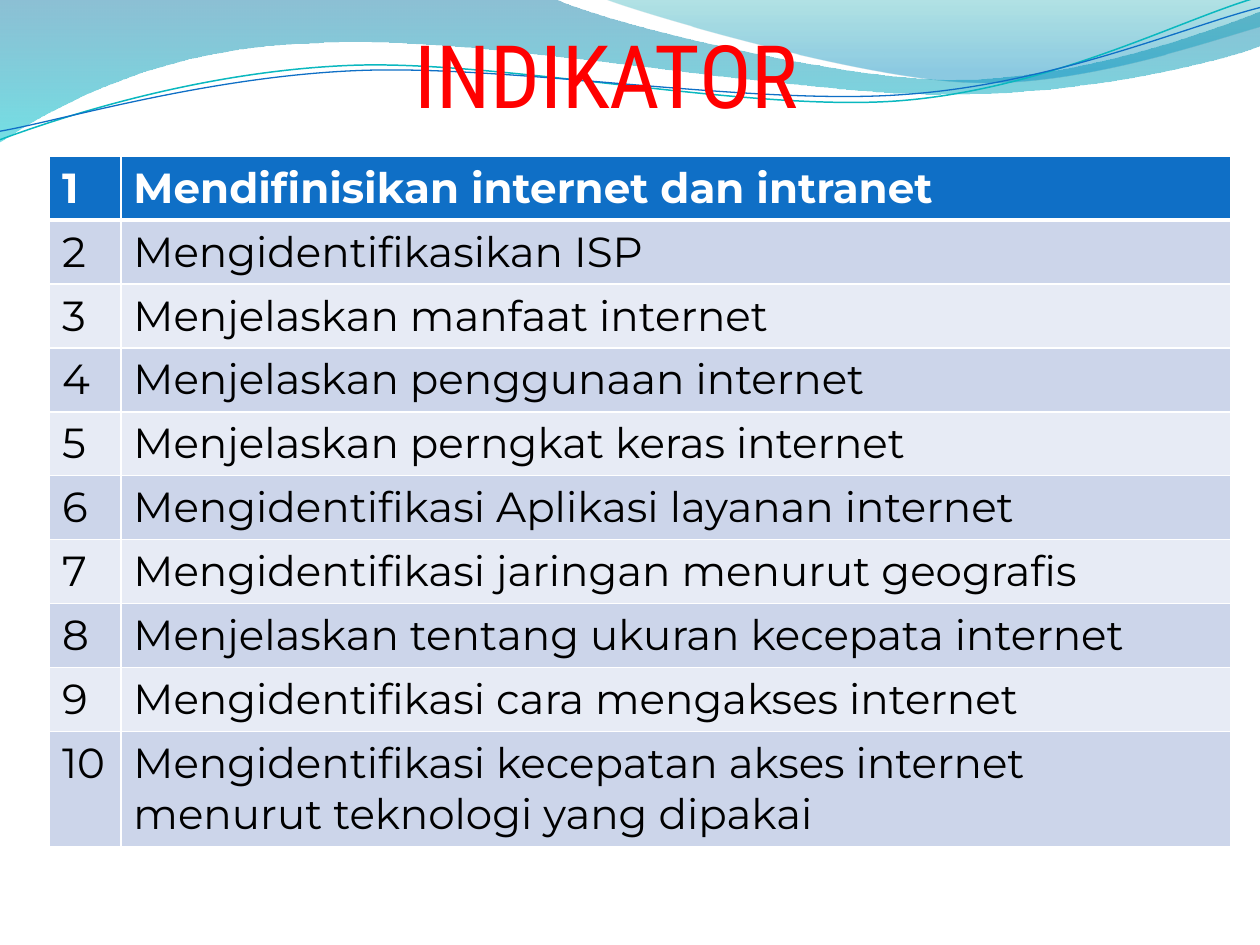
from lxml.etree import SubElement
from pptx import Presentation
from pptx.dml.color import RGBColor
from pptx.enum.text import MSO_ANCHOR, PP_ALIGN
from pptx.oxml.ns import qn
from pptx.util import Pt

WHITE = RGBColor(0xFF, 0xFF, 0xFF)
BLACK = RGBColor(0x00, 0x00, 0x00)
RED = RGBColor(0xFF, 0x00, 0x00)
BLUE = RGBColor(0x0F, 0x6F, 0xC6)
TURQUOISE = RGBColor(0x0A, 0xB8, 0xBF)
BAND_DARK = RGBColor(0xCC, 0xD5, 0xEA)
BAND_LIGHT = RGBColor(0xE7, 0xEB, 0xF5)

# Gradient stops: position, colour, opacity in percent
WIDE_GRADIENT = [(0, RGBColor(0x00, 0x74, 0xA1), 45), (1, RGBColor(0x00, 0xC6, 0xCF), 55)]
RIGHT_GRADIENT = [(0, RGBColor(0x00, 0xA1, 0xA9), 30), (0.8, RGBColor(0x00, 0x8B, 0xBF), 45)]

# Outlines: a start point, then lines (1 point) and Bezier curves (3 points)
WIDE_WAVE = [
    [(0, 0)], [(316.8, -0.7)],
    [(342.7, 12.2), (478.1, 45.4), (545.8, 45.4)],
    [(614.2, 45.4), (689.8, 18.7), (720, 6.5)],
    [(720.7, 25.9)],
    [(707.8, 31.7), (626.4, 54.7), (537.1, 54)],
    [(447.8, 54), (275, 20.2), (185, 24.5)],
    [(92.9, 25.9), (33.1, 59.8), (-0.7, 81.4)],
]
RIGHT_WAVE = [
    [(344.9, -0.7)],
    [(366.5, 7.9), (491, 44.6), (553.7, 46.8)],
    [(616.3, 49.7), (691.9, 23), (720, 15.1)],
    [(720, 0)],
]
TURQUOISE_CURVE = [
    [(-1.4, 62.9)],
    [(33.8, 51.7), (114.1, 29.4), (199.8, 29.9)],
    [(284.9, 30.3), (425.8, 67.3), (512.4, 64.9)],
    [(599, 62.4), (676.5, 25.7), (720.2, 15.5)],
]
BLUE_CURVE = [
    [(-1.1, 58)],
    [(32.9, 53.8), (118.3, 32.5), (204.1, 33)],
    [(290.6, 33.4), (428.9, 63.8), (515.5, 61.4)],
    [(601.3, 59.6), (678.5, 30.1), (721.4, 21.3)],
]
CURVE_ROTATION = 357.3

INDICATORS = [
    "Mendifinisikan internet dan intranet",
    "Mengidentifikasikan ISP",
    "Menjelaskan manfaat internet",
    "Menjelaskan penggunaan internet",
    "Menjelaskan perngkat keras internet",
    "Mengidentifikasi Aplikasi layanan internet",
    "Mengidentifikasi jaringan menurut geografis",
    "Menjelaskan tentang ukuran kecepata internet",
    "Mengidentifikasi cara mengakses internet",
    "Mengidentifikasi kecepatan akses internet menurut teknologi yang dipakai",
]


def set_attributes(target, values):
    for name, value in values.items():
        setattr(target, name, value)


def add_outline(shapes, left, top, outline, close):
    """Build a freeform, joining each three-point segment into a Bezier curve."""
    points = [(Pt(left + x), Pt(top + y)) for segment in outline for x, y in segment]
    builder = shapes.build_freeform(*points[0])
    builder.add_line_segments(points[1:], close=close)
    shape = builder.convert_to_shape()
    shape.shadow.inherit = False
    lines = shape._element.iter(qn("a:lnTo"))
    lines = iter(list(lines))
    for segment in outline[1:]:
        first, *others = [next(lines) for _ in segment]
        if others:
            first.tag = qn("a:cubicBezTo")
        for line in others:
            first.append(line[0])
            line.getparent().remove(line)
    return shape


def add_waves(slide, left, top):
    for outline, gradient in ((WIDE_WAVE, WIDE_GRADIENT), (RIGHT_WAVE, RIGHT_GRADIENT)):
        wave = add_outline(slide.shapes, left, top, outline, close=True)
        wave.line.fill.background()
        wave.fill.gradient()
        wave.fill.gradient_angle = 270
        for stop, (position, color, _) in zip(wave.fill.gradient_stops, gradient):
            stop.position = position
            stop.color.rgb = color
        for color_element, (_, _, opacity) in zip(wave._element.iter(qn("a:srgbClr")), gradient):
            SubElement(color_element, qn("a:alpha"), val=str(opacity * 1000))
    group = slide.shapes.add_group_shape()
    for outline, color, width in ((TURQUOISE_CURVE, TURQUOISE, 0.85), (BLUE_CURVE, BLUE, 0.75)):
        curve = add_outline(group.shapes, left, top, outline, close=False)
        curve.rotation = CURVE_ROTATION
        curve.fill.background()
        curve.line.color.rgb = color
        curve.line.width = Pt(width)


def place_title(slide, left, top, width, height):
    title = slide.shapes.title
    set_attributes(title, {"left": Pt(left), "top": Pt(top), "width": Pt(width), "height": Pt(height)})
    set_attributes(title.text_frame, {
        "text": "INDIKATOR", "vertical_anchor": MSO_ANCHOR.BOTTOM, "word_wrap": True,
        "margin_left": 0, "margin_right": 0, "margin_top": Pt(3.6), "margin_bottom": 0,
    })
    paragraph = title.text_frame.paragraphs[0]
    paragraph.alignment = PP_ALIGN.CENTER
    set_attributes(paragraph.runs[0].font, {"name": "Roboto Condensed", "size": Pt(50)})
    paragraph.runs[0].font.color.rgb = RED
    slide.shapes._spTree.append(title._element)  # in front of the waves


def add_borders(cell, widths):
    properties = cell._tc.get_or_add_tcPr()
    for side, width in widths.items():
        line = SubElement(properties, qn(f"a:ln{side}"), w=str(Pt(width)))
        fill = SubElement(line, qn("a:solidFill"))
        SubElement(fill, qn("a:srgbClr"), val=str(WHITE))


def add_indicator_table(slide, left, top, width, height):
    frame = slide.shapes.add_table(len(INDICATORS), 2, Pt(left), Pt(top), Pt(width), Pt(height))
    table = frame.table
    number_width = 40.8
    table.columns[0].width = Pt(number_width)
    table.columns[1].width = Pt(width - number_width)
    for index, indicator in enumerate(INDICATORS):
        table.rows[index].height = Pt(29.2)
        header = index == 0
        band = BLUE if header else (BAND_DARK if index % 2 else BAND_LIGHT)
        for cell, text in zip(table.rows[index].cells, (str(index + 1), indicator)):
            add_borders(cell, {"L": 1, "R": 1, "T": 3 if index == 1 else 1, "B": 3 if header else 1})
            cell.fill.solid()
            cell.fill.fore_color.rgb = band
            cell.text = text
            font = cell.text_frame.paragraphs[0].runs[0].font
            set_attributes(font, {"name": "Montserrat", "size": Pt(24), "bold": header})
            font.color.rgb = WHITE if header else BLACK
    frame.height = Pt(height)


def main():
    presentation = Presentation()
    set_attributes(presentation, {"slide_width": Pt(720), "slide_height": Pt(540)})
    slide = presentation.slides.add_slide(presentation.slide_layouts[5])
    add_waves(slide, 0, 0)
    place_title(slide, 22.5, 5.5, 648, 66.7)
    add_indicator_table(slide, 28.3, 89.3, 675.2, 388.8)
    presentation.save("out.pptx")


if __name__ == "__main__":
    main()
